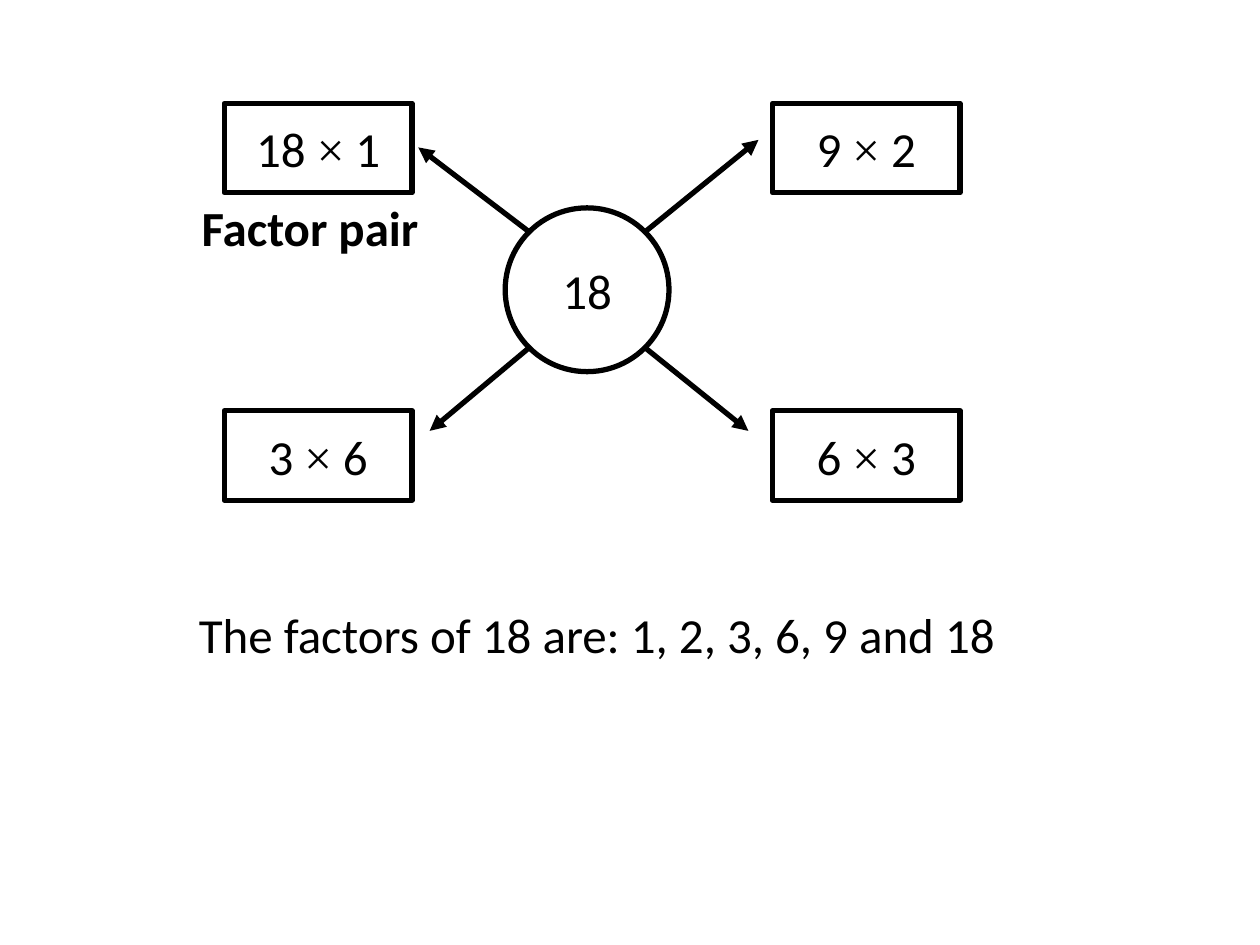
from lxml import etree
from pptx import Presentation, util as u
from pptx.dml.color import RGBColor
from pptx.enum import shapes, text
from pptx.oxml.ns import qn

INK = "000000"
STROKE = 3
FACTOR_BOX = (1.49, 0.71)
CIRCLE_SIZE = 1.3
CIRCLE_CENTRE = (2.88, 1.48)
DIAGONAL = CIRCLE_SIZE / 2 * 0.5 ** 0.5
FACTOR_PAIRS = [
    ("18", "1", 0, 0, 0.05, 0.35),
    ("9", "2", 1, 0, 0.11, 0.29),
    ("6", "3", 1, 1, 0.19, 0.16),
    ("3", "6", 0, 1, 0.14, 0.16),
]


def inches(*lengths):
    """Convert lengths in inches to slide units."""
    return [u.Inches(length) for length in lengths]


def colour(hex_string):
    """Turn a hex string into a colour."""
    return RGBColor.from_string(hex_string)


def write(frame, runs, bold=False, align=text.PP_ALIGN.CENTER):
    """Write (words, font) runs as one paragraph."""
    frame.word_wrap = True
    frame.vertical_anchor = text.MSO_ANCHOR.MIDDLE
    paragraph = frame.paragraphs[0]
    paragraph.alignment = align
    for words, font_name in runs:
        run = paragraph.add_run()
        run.text = words
        run.font.name = font_name
        run.font.size = u.Pt(28)
        run.font.bold = bold
        run.font.color.rgb = colour(INK)


def outline(slide, preset, box, runs):
    """Place an unfilled outlined shape with centred text."""
    shape = slide.shapes.add_shape(preset, *inches(*box))
    shape.shadow.inherit = False
    shape.fill.background()
    shape.line.color.rgb = colour(INK)
    shape.line.width = u.Pt(STROKE)
    write(shape.text_frame, runs)


def arrow(slide, start, tip):
    """Draw a straight arrow from start to tip."""
    line = slide.shapes.add_connector(
        shapes.MSO_CONNECTOR.STRAIGHT, *inches(*start, *tip))
    line.line.color.rgb = colour(INK)
    line.line.width = u.Pt(STROKE)
    etree.SubElement(line.line._get_or_add_ln(), qn("a:tailEnd"), type="triangle")
    etree.SubElement(line._element.spPr, qn("a:effectLst"))


def caption(slide, box, words, **style):
    """Place a line of free text."""
    frame = slide.shapes.add_textbox(*inches(*box)).text_frame
    write(frame, [(words, "Calibri")], **style)


def factor_diagram(slide, box):
    """Draw the number with an arrow to a factor pair in each corner."""
    left, top, width, height = box
    pair_width, pair_height = FACTOR_BOX
    centre_x, centre_y = left + CIRCLE_CENTRE[0], top + CIRCLE_CENTRE[1]
    outline(slide, shapes.MSO_SHAPE.OVAL,
            (centre_x - CIRCLE_SIZE / 2, centre_y - CIRCLE_SIZE / 2,
             CIRCLE_SIZE, CIRCLE_SIZE), [("18", "Calibri")])
    for first, second, column, row, gap, drop in FACTOR_PAIRS:
        pair_left = left + column * (width - pair_width)
        pair_top = top + row * (height - pair_height)
        outline(slide, shapes.MSO_SHAPE.RECTANGLE,
                (pair_left, pair_top, pair_width, pair_height),
                [(f"{first} ", "Calibri"), ("×", "Times New Roman"),
                 (f" {second}", "Calibri")])
        tip_x = pair_left - gap if column else pair_left + pair_width + gap
        start = (centre_x + (2 * column - 1) * DIAGONAL,
                 centre_y + (2 * row - 1) * DIAGONAL)
        arrow(slide, start, (tip_x, pair_top + drop))
    caption(slide, (left - 0.56, top + 0.7, 2.48, 0.57), "Factor pair", bold=True)


def main():
    """Build and save the slide."""
    deck = Presentation()
    deck.slide_width, deck.slide_height = inches(10, 7.5)
    slide = deck.slides.add_slide(deck.slide_layouts[6])
    factor_diagram(slide, (1.78, 0.82, 5.84, 3.15))
    caption(slide, (1.48, 4.75, 7.48, 0.57),
            "The factors of 18 are: 1, 2, 3, 6, 9 and 18",
            align=text.PP_ALIGN.LEFT)
    deck.save("out.pptx")


if __name__ == "__main__":
    main()
